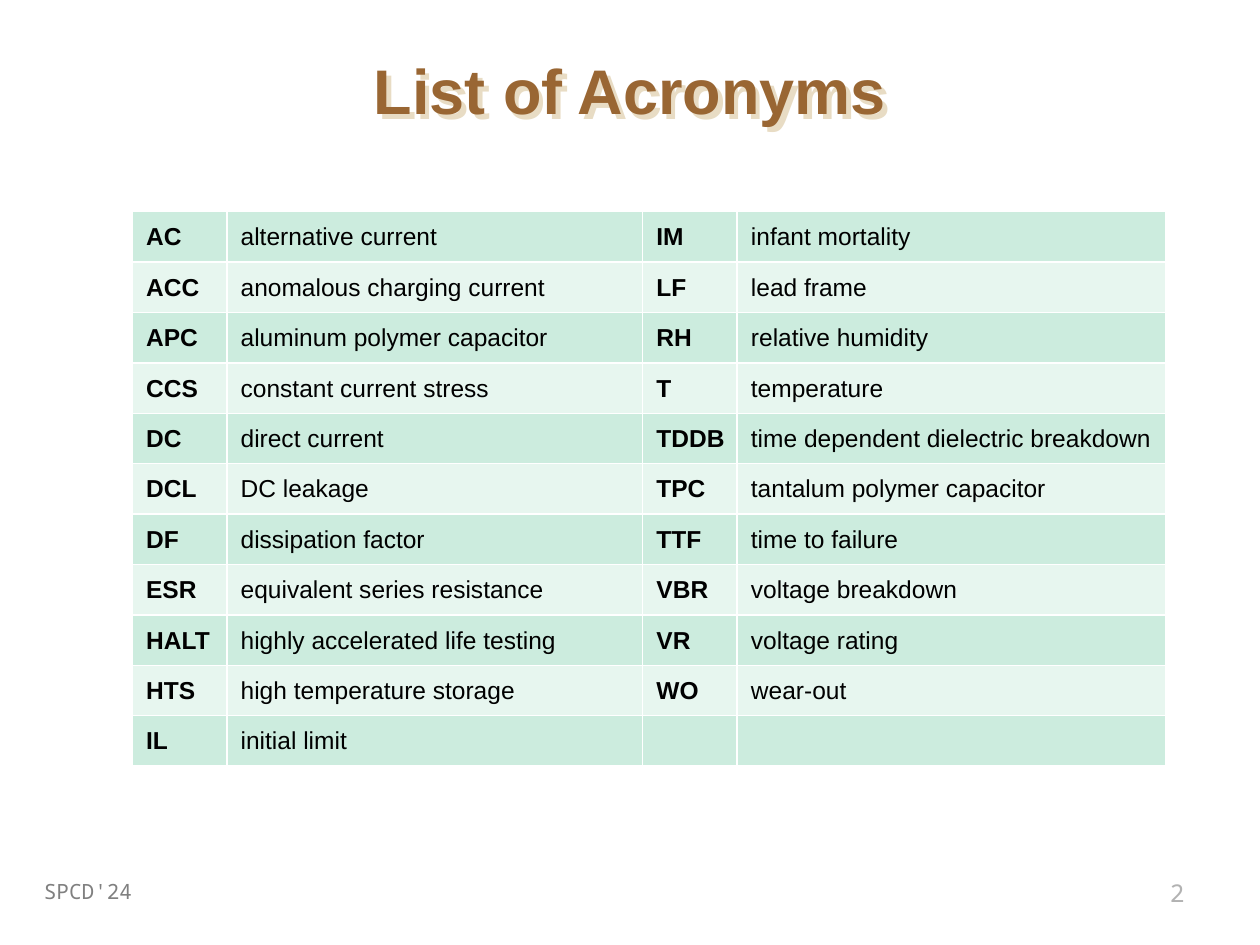
from dataclasses import dataclass
from typing import NamedTuple

from lxml.etree import SubElement
from pptx import Presentation
from pptx.dml.color import RGBColor
from pptx.enum.text import MSO_ANCHOR as Anchor, PP_ALIGN as Align
from pptx.oxml.ns import qn
from pptx.util import Pt

EMU_PER_PX = 9144


@dataclass(frozen=True)
class Theme:
    sans: str = "Arial"
    mono: str = "Noto Sans Mono"
    title: str = "996633"
    title_shadow: str = "E8DCC4"
    body: str = "000000"
    footer: str = "808080"
    number: str = "B2B2B2"
    border: str = "FFFFFF"
    bands: tuple[str, str] = ("CCECDE", "E7F6EF")
    title_size: int = 36
    body_size: int = 14
    footer_size: int = 12
    number_size: int = 14


class Box(NamedTuple):
    left: int
    top: int
    width: int
    height: int


class Style(NamedTuple):
    font: str
    size: int
    color: str
    bold: bool = False


class Label(NamedTuple):
    text: str
    box: Box
    style: Style
    align: Align = Align.LEFT
    anchor: Anchor = Anchor.TOP


class Acronym(NamedTuple):
    short: str
    meaning: str


THEME = Theme()
TITLE = Label("List of Acronyms", Box(75, 17, 850, 108),
              Style(THEME.sans, THEME.title_size, THEME.title, True), Align.CENTER, Anchor.MIDDLE)
FOOTER = Label("SPCD'24", Box(25, 692, 892, 52),
               Style(THEME.mono, THEME.footer_size, THEME.footer))
NUMBER = Label("2", Box(833, 692, 117, 52),
               Style(THEME.mono, THEME.number_size, THEME.number), Align.RIGHT)
ACRONYMS = [
    Acronym("AC", "alternative current"),
    Acronym("ACC", "anomalous charging current"),
    Acronym("APC", "aluminum polymer capacitor"),
    Acronym("CCS", "constant current stress"),
    Acronym("DC", "direct current"),
    Acronym("DCL", "DC leakage"),
    Acronym("DF", "dissipation factor"),
    Acronym("ESR", "equivalent series resistance"),
    Acronym("HALT", "highly accelerated life testing"),
    Acronym("HTS", "high temperature storage"),
    Acronym("IL", "initial limit"),
    Acronym("IM", "infant mortality"),
    Acronym("LF", "lead frame"),
    Acronym("RH", "relative humidity"),
    Acronym("T", "temperature"),
    Acronym("TDDB", "time dependent dielectric breakdown"),
    Acronym("TPC", "tantalum polymer capacitor"),
    Acronym("TTF", "time to failure"),
    Acronym("VBR", "voltage breakdown"),
    Acronym("VR", "voltage rating"),
    Acronym("WO", "wear-out"),
]
ROW_COUNT = 11
ROW_HEIGHT = 40
COLUMN_WIDTHS = (75, 330, 75, 340)
TABLE_LEFT, TABLE_TOP = 105, 168
CELL_INSET, CELL_INDENT = 1, 10
SHADOW_DISTANCE = 5
SHADOW_ANGLE = 45


def px(length: int) -> int:
    return length * EMU_PER_PX


def style_paragraph(paragraph, style: Style) -> None:
    font = paragraph.font
    font.name = style.font
    font.size = Pt(style.size)
    font.bold = style.bold
    font.color.rgb = RGBColor.from_string(style.color)


def add_label(slide, label: Label):
    shape = slide.shapes.add_textbox(*map(px, label.box))
    frame = shape.text_frame
    frame.word_wrap = True
    frame.vertical_anchor = label.anchor
    paragraph = frame.paragraphs[0]
    paragraph.text = label.text
    paragraph.alignment = label.align
    style_paragraph(paragraph, label.style)
    return shape


def add_shadow(shape, color: str) -> None:
    effects = SubElement(shape._element.spPr, qn("a:effectLst"))
    shadow = SubElement(effects, qn("a:outerShdw"), blurRad="0", dist=str(px(SHADOW_DISTANCE)),
                        dir=str(SHADOW_ANGLE * 60000), algn="ctr", rotWithShape="0")
    SubElement(shadow, qn("a:srgbClr"), val=color)


def set_borders(cell, color: str) -> None:
    properties = cell._tc.get_or_add_tcPr()
    for side in ("lnL", "lnR", "lnT", "lnB"):
        line = SubElement(properties, qn(f"a:{side}"), w=str(Pt(1)))
        fill = SubElement(line, qn("a:solidFill"))
        SubElement(fill, qn("a:srgbClr"), val=color)


def fill_cell(cell, text: str, bold: bool, band: str) -> None:
    set_borders(cell, THEME.border)
    cell.fill.solid()
    cell.fill.fore_color.rgb = RGBColor.from_string(band)
    cell.vertical_anchor = Anchor.MIDDLE
    cell.margin_left = cell.margin_top = cell.margin_right = px(CELL_INSET)
    cell.margin_bottom = 0
    if text:
        paragraph = cell.text_frame.paragraphs[0]
        paragraph.text = text
        paragraph._p.get_or_add_pPr().set("marL", str(px(CELL_INDENT)))
        style_paragraph(paragraph, Style(THEME.sans, THEME.body_size, THEME.body, bold))


def add_acronym_table(slide, acronyms: list[Acronym]) -> None:
    box = Box(TABLE_LEFT, TABLE_TOP, sum(COLUMN_WIDTHS), ROW_COUNT * ROW_HEIGHT)
    table = slide.shapes.add_table(ROW_COUNT, len(COLUMN_WIDTHS), *map(px, box)).table
    table.first_row = False
    table.horz_banding = False
    for column, width in zip(table.columns, COLUMN_WIDTHS):
        column.width = px(width)
    for row_index, row in enumerate(table.rows):
        row.height = px(ROW_HEIGHT)
        texts = [text for acronym in acronyms[row_index::ROW_COUNT] for text in acronym]
        texts += [""] * (len(COLUMN_WIDTHS) - len(texts))
        for column_index, (cell, text) in enumerate(zip(row.cells, texts)):
            fill_cell(cell, text, column_index % 2 == 0, THEME.bands[row_index % 2])


def main() -> None:
    presentation = Presentation()
    presentation.slide_width = px(1000)
    presentation.slide_height = px(750)
    slide = presentation.slides.add_slide(presentation.slide_layouts[6])
    add_shadow(add_label(slide, TITLE), THEME.title_shadow)
    add_label(slide, FOOTER)
    add_label(slide, NUMBER)
    add_acronym_table(slide, ACRONYMS)
    presentation.save("out.pptx")


if __name__ == "__main__":
    main()
